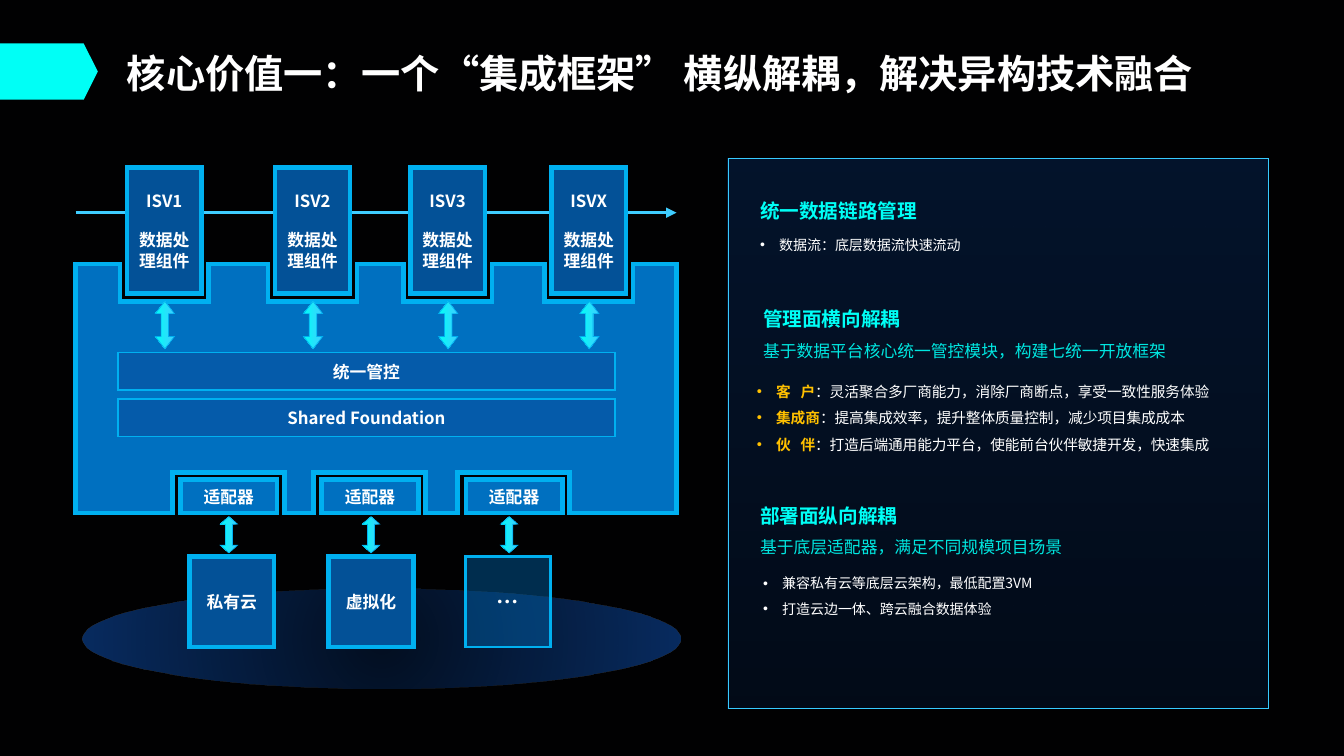
from dataclasses import dataclass
from lxml.etree import SubElement
from pptx import Presentation
from pptx.dml.color import RGBColor as RGB
from pptx.enum.shapes import MSO_CONNECTOR as LINK, MSO_SHAPE as KIND
from pptx.enum.text import MSO_ANCHOR as ANCHOR, PP_ALIGN as ALIGN
from pptx.oxml.ns import qn
from pptx.util import Inches, Pt


@dataclass(frozen=True)
class Theme:
    font: str = "Noto Sans CJK SC"
    back: str = "010102"
    white: str = "FFFFFF"
    aqua: str = "00FFF6"
    gold: str = "FFC000"
    sky: str = "3FCDFF"
    edge: str = "00B0F0"
    rim: str = "37CBFF"
    glow: str = "1473FE"
    base: str = "0070C0"
    deep: str = "035197"
    band: str = "0B4A97"
    title: float = 28
    head: float = 14
    label: float = 12
    dots: float = 16
    body: float = 10.5
    small: float = 10


theme = Theme()


def paint(shape, stops, line=None, weight=1, angle=None):
    """Fill with (colour, opacity) stops; without an angle two stops run radially."""
    shape.shadow.inherit = False
    if len(stops) == 1:
        shape.fill.solid()
        shape.fill.fore_color.rgb = RGB.from_string(stops[0][0])
        clr = shape.fill._xPr.find(".//" + qn("a:srgbClr"))
        SubElement(clr, qn("a:alpha"), val=str(stops[0][1] * 1000))
    else:
        shape.fill.gradient()
        grad = shape.fill._xPr.find(qn("a:gradFill"))
        grad.clear()
        grad.set("rotWithShape", "1")
        steps = SubElement(grad, qn("a:gsLst"))
        for pos, (color, alpha) in zip((0, 100000), stops):
            stop = SubElement(steps, qn("a:gs"), pos=str(pos))
            clr = SubElement(stop, qn("a:srgbClr"), val=color)
            SubElement(clr, qn("a:alpha"), val=str(alpha * 1000))
        if angle is None:
            path = SubElement(grad, qn("a:path"))
            path.set("path", "circle")
            SubElement(path, qn("a:fillToRect"), l="50000", t="50000", r="50000", b="50000")
        else:
            SubElement(grad, qn("a:lin"), ang=str(angle * 60000), scaled="0")
    if line:
        shape.line.color.rgb = RGB.from_string(line)
        shape.line.width = Pt(weight)
        SubElement(shape.line._get_or_add_ln(), qn("a:miter"), lim="800000")
    else:
        shape.line.fill.background()


def write(shape, paras, space=None, bullet=False, center=False, gap=0):
    """Each paragraph is a list of (text, size, colour, bold, opacity, tracking)."""
    frame = shape.text_frame
    frame.word_wrap = True
    frame.vertical_anchor = ANCHOR.MIDDLE if center else ANCHOR.TOP
    for i, parts in enumerate(paras):
        para = frame.add_paragraph() if i else frame.paragraphs[0]
        para.alignment = ALIGN.CENTER if center else ALIGN.LEFT
        if space:
            para.line_spacing = space
        if i and gap:
            para.space_before = Pt(gap)
        if bullet:
            props = para._p.get_or_add_pPr()
            props.set("marL", str(Inches(0.19)))
            props.set("indent", str(Inches(-0.19)))
            SubElement(props, qn("a:buFont"), typeface="Arial")
            SubElement(props, qn("a:buChar"), char="•")
        for text, size, color, bold, alpha, track in parts:
            run = para.add_run()
            run.text = text
            run.font.size, run.font.bold = Pt(size), bold
            run.font.color.rgb = RGB.from_string(color)
            run.font.name = theme.font
            mark = run._r.get_or_add_rPr()
            SubElement(mark, qn("a:ea"), typeface=theme.font)
            if alpha < 100:
                clr = mark.find(".//" + qn("a:srgbClr"))
                SubElement(clr, qn("a:alpha"), val=str(alpha * 1000))
            if track:
                mark.set("spc", str(track))


title = (theme.title, theme.white, True, 100, 0)
head = (theme.head, theme.aqua, True, 100, 0)
lead = (theme.label, theme.aqua, False, 90, 0)
label = (theme.label, theme.white, True, 100, 0)
dots = (theme.dots, theme.white, True, 100, 0)
role = (theme.body, theme.gold, True, 100, 0)
wide = (theme.body, theme.gold, True, 100, 230)
body = (theme.body, theme.white, False, 100, 0)
small = (theme.small, theme.white, False, 100, 0)

deck = Presentation()
deck.slide_width, deck.slide_height = Inches(13.33), Inches(7.5)
slide = deck.slides.add_slide(deck.slide_layouts[6])
slide.background.fill.solid()
slide.background.fill.fore_color.rgb = RGB.from_string(theme.back)
shapes = slide.shapes

# Title
flag = shapes.add_shape(KIND.PENTAGON, 0, Inches(0.43), Inches(0.97), Inches(0.56))
flag.adjustments[0] = 0.25
paint(flag, [(theme.aqua, 100)])
box = shapes.add_textbox(Inches(1.16), Inches(0.44), Inches(10.91), Inches(0.57))
write(box, [[("核心价值一：一个“集成框架” 横纵解耦，解决异构技术融合", *title)]])

# Platform with notches for the components above and the adapters below
parts = [("ISV1", 1.26), ("ISV2", 2.73), ("ISV3", 4.07), ("ISVX", 5.47)]
links = [(1.79, 1.88, 2.09, "私有云"), (3.19, 3.26, 3.5, "虚拟化"), (4.62, 4.62, 4.87, "…")]
left, right, top, bottom = 0.75, 6.71, 2.62, 5.09
spots = [(left, top)]
for name, x in parts:
    a, b = x - 0.07, x + 0.81
    spots += [(a, top), (a, 2.99), (b, 2.99), (b, top)]
spots += [(right, top), (right, bottom)]
for x, *rest in reversed(links):
    a, b = x - 0.08, x + 1.03
    spots += [(b, bottom), (b, 4.69), (a, 4.69), (a, bottom)]
spots.append((left, bottom))
spots = [(Inches(x), Inches(y)) for x, y in spots]
form = shapes.build_freeform(*spots[0])
form.add_line_segments(spots[1:], close=True)
paint(form.convert_to_shape(), [(theme.base, 100)], theme.edge, 3.25)

disc = shapes.add_shape(KIND.OVAL, Inches(0.82), Inches(5.84), Inches(5.93), Inches(0.99))
paint(disc, [(theme.glow, 12), (theme.glow, 38)])

flow = shapes.add_connector(LINK.STRAIGHT, Inches(left), Inches(2.11), Inches(right), Inches(2.11))
flow.line.color.rgb = RGB.from_string(theme.sky)
flow.line.width = Pt(2.5)
SubElement(flow.line._get_or_add_ln(), qn("a:tailEnd"), type="triangle")
SubElement(flow._element.spPr, qn("a:effectLst"))

# Labelled boxes: place, fill, opacity, line width, paragraphs, paragraph gap
tiles = [
    (1.17, 3.5, 4.93, 0.37, theme.band, 53, 1, [[("统一管控", *label)]], 0),
    (1.17, 3.96, 4.93, 0.37, theme.band, 53, 1, [[("Shared Foundation", *label)]], 0),
]
arrows = []
for name, x in parts:
    text = [[(name, *label)], [("数据处理组件", *label)]]
    tiles.append((x, 1.66, 0.74, 1.25, theme.deep, 100, 3.25, text, 14))
    arrows.append((x + 0.14, 3.13, 0.47, 0.19, 0.39, 0.64))
for x, node, arrow, name in links:
    tiles.append((x, 4.76, 0.96, 0.33, theme.base, 100, 3.25, [[("适配器", *label)]], 0))
    last = name == "…"
    look = (theme.base, 40, 2) if last else (theme.deep, 100, 3.25)
    tiles.append((node, 5.52, 0.84, 0.9, *look, [[(name, *(dots if last else label))]], 0))
    arrows.append((arrow, 5.22, 0.36, 0.17, 0.41, 0.44))
for x, y, w, h, fill, alpha, weight, text, gap in tiles:
    tile = shapes.add_shape(KIND.RECTANGLE, Inches(x), Inches(y), Inches(w), Inches(h))
    paint(tile, [(fill, alpha)], theme.edge, weight)
    write(tile, text, center=True, gap=gap)
for x, y, w, h, shaft, tip in arrows:
    arrow = shapes.add_shape(KIND.LEFT_RIGHT_ARROW, Inches(x), Inches(y), Inches(w), Inches(h))
    arrow.rotation = 90
    arrow.adjustments[0], arrow.adjustments[1] = shaft, tip
    paint(arrow, [(theme.sky, 100), (theme.aqua, 100)], theme.edge, 0.5, angle=90)

# Benefits panel
panel = shapes.add_shape(KIND.RECTANGLE, Inches(7.22), Inches(1.57), Inches(5.36), Inches(5.46))
paint(panel, [(theme.glow, 9), (theme.glow, 17)], theme.rim, 0.5, angle=270)
notes = [
    (7.44, 1.81, 5.14, 0.41, False, [[("统一数据链路管理", *head)]]),
    (7.44, 2.21, 5.3, 0.32, True, [[("数据流：底层数据流快速流动", *small)]]),
    (7.47, 2.88, 5.14, 0.72, False, [
        [("管理面横向解耦", *head)],
        [("基于数据平台核心统一管控模块，构建七统一开放框架", *lead)]]),
    (7.41, 3.66, 5.14, 0.9, True, [
        [("客 ", *wide), ("户", *role), ("：灵活聚合多厂商能力，消除厂商断点，享受一致性服务体验", *body)],
        [("集成商", *role), ("：提高集成效率，提升整体质量控制，减少项目集成成本", *body)],
        [("伙 ", *wide), ("伴", *role), ("：打造后端通用能力平台，使能前台伙伴敏捷开发，快速集成", *body)]]),
    (7.44, 4.83, 4.63, 0.72, False, [
        [("部署面纵向解耦", *head)],
        [("基于底层适配器，满足不同规模项目场景", *lead)]]),
    (7.47, 5.57, 5.3, 0.58, True, [
        [("兼容私有云等底层云架构，最低配置3VM", *small)],
        [("打造云边一体、跨云融合数据体验", *small)]]),
]
for x, y, w, h, bullet, text in notes:
    box = shapes.add_textbox(Inches(x), Inches(y), Inches(w), Inches(h))
    write(box, text, space=1.5, bullet=bullet)

deck.save("out.pptx")
